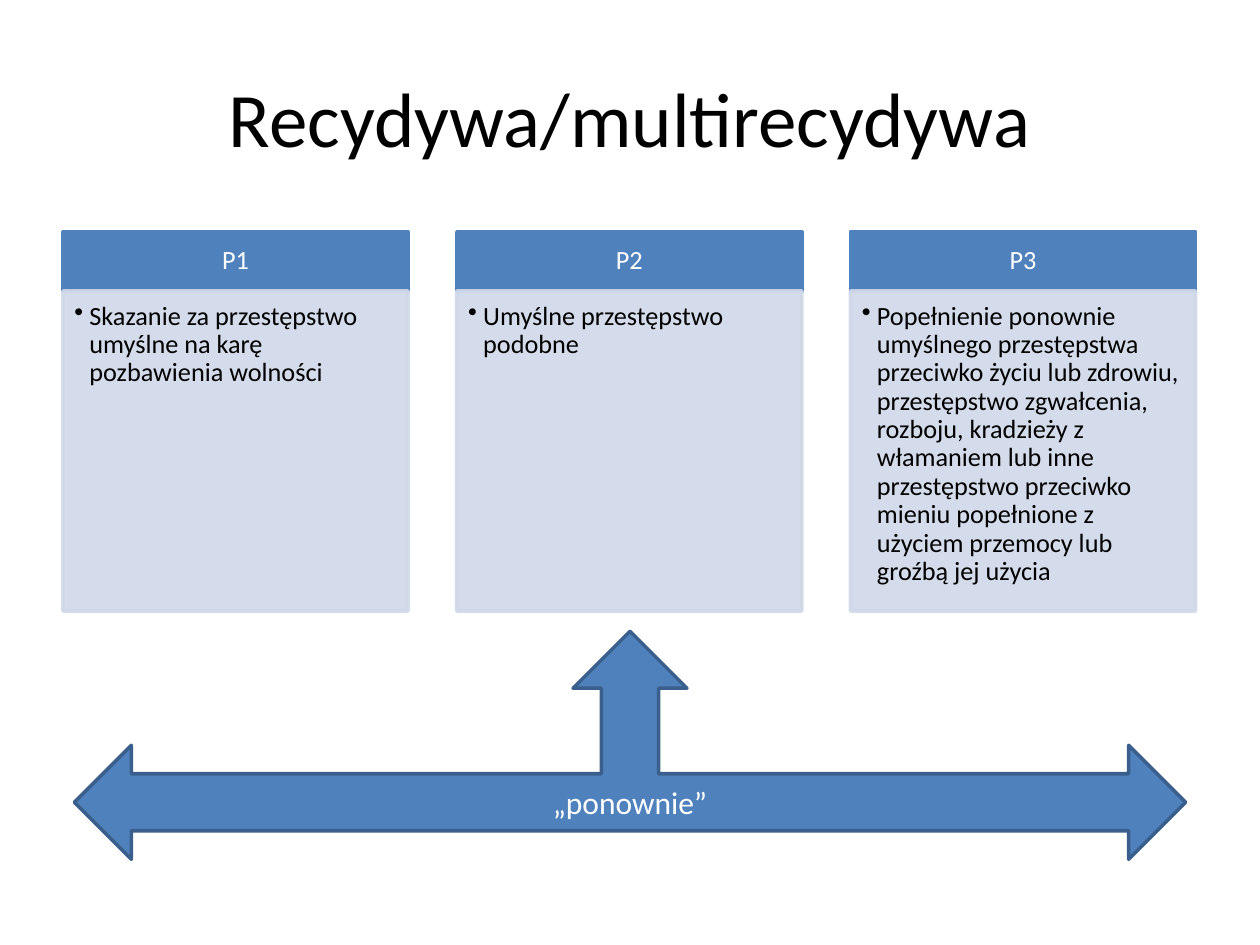
"""Build a slide comparing three offences leading to recidivism."""
from lxml import etree
from pptx import Presentation
from pptx.dml.color import RGBColor
from pptx.enum.shapes import MSO_SHAPE
from pptx.enum.text import MSO_ANCHOR, PP_ALIGN
from pptx.oxml.ns import qn
from pptx.util import Inches, Pt

RECT, ARROW = MSO_SHAPE.RECTANGLE, MSO_SHAPE.LEFT_RIGHT_UP_ARROW
TOP, MIDDLE = MSO_ANCHOR.TOP, MSO_ANCHOR.MIDDLE
LEFT, CENTER = PP_ALIGN.LEFT, PP_ALIGN.CENTER

FONT = "Calibri"
BLACK, WHITE = "000000", "FFFFFF"
BLUE, DARK_BLUE, PALE_BLUE = "4F81BD", "3A5F8C", "D0D8E8"
TITLE = "Recydywa/multirecydywa"
ARROW_TEXT = "„ponownie”"
COLUMNS = [
    ("P1", "Skazanie za przestępstwo umyślne na karę pozbawienia wolności"),
    ("P2", "Umyślne przestępstwo podobne"),
    ("P3", "Popełnienie ponownie umyślnego przestępstwa przeciwko życiu lub zdrowiu, "
           "przestępstwo zgwałcenia, rozboju, kradzieży z włamaniem lub inne przestępstwo "
           "przeciwko mieniu popełnione z użyciem przemocy lub groźbą jej użycia"),
]
COL_LEFT, COL_PITCH, COL_W = 0.5, 3.125, 2.74
HEAD_TOP, HEAD_H, BODY_H = 1.84, 0.47, 2.54
HEAD_INSETS = (0.12, 0.07, 0.12, 0.07)
BODY_INSETS = (0.09, 0.09, 0.12, 0.13)
PLAIN_INSETS = (0.1, 0.05, 0.1, 0.05)


def rgb(value):
    return RGBColor.from_string(value)


def set_text(sp, text, size, color, align=CENTER, anchor=MIDDLE, insets=PLAIN_INSETS):
    tf = sp.text_frame
    tf.word_wrap = True
    tf.vertical_anchor = anchor
    tf.margin_left, tf.margin_top, tf.margin_right, tf.margin_bottom = map(Inches, insets)
    tf.text = text
    p = tf.paragraphs[0]
    p.alignment = align
    font = p.runs[0].font
    font.name, font.size, font.color.rgb = FONT, Pt(size), rgb(color)
    return p


def add_box(s, kind, at, fill, line):
    sp = s.shapes.add_shape(kind, *map(Inches, at))
    sp.shadow.inherit = False
    sp.fill.solid()
    sp.fill.fore_color.rgb = rgb(fill)
    sp.line.color.rgb = rgb(line)
    sp.line.width = Pt(2)
    return sp


def set_opacity(sp, percent):
    for color in sp._element.spPr.iter(qn("a:srgbClr")):
        etree.SubElement(color, qn("a:alpha"), val=str(percent * 1000))


def add_bullet(p, indent):
    pPr = p._p.get_or_add_pPr()
    pPr.set("marL", str(Inches(indent)))
    pPr.set("indent", str(-Inches(indent)))
    etree.SubElement(pPr, qn("a:buChar"), char="•")


def add_column(s, x, head, body):
    sp = add_box(s, RECT, (x, HEAD_TOP, COL_W, HEAD_H), BLUE, BLUE)
    set_text(sp, head, 15, WHITE, insets=HEAD_INSETS).line_spacing = 0.9
    sp = add_box(s, RECT, (x, HEAD_TOP + HEAD_H, COL_W, BODY_H), PALE_BLUE, PALE_BLUE)
    set_opacity(sp, 90)
    p = set_text(sp, body, 15, BLACK, LEFT, TOP, BODY_INSETS)
    p.line_spacing = 0.9
    add_bullet(p, 0.12)


def main():
    prs = Presentation()
    prs.slide_width, prs.slide_height = Inches(10), Inches(7.5)
    s = prs.slides.add_slide(prs.slide_layouts[6])
    title = s.shapes.add_textbox(*map(Inches, (0.5, 0.3, 9, 1.25)))
    set_text(title, TITLE, 44, BLACK)
    for i, (head, body) in enumerate(COLUMNS):
        add_column(s, COL_LEFT + i * COL_PITCH, head, body)
    arrow = add_box(s, ARROW, (0.59, 5.01, 8.82, 1.81), BLUE, DARK_BLUE)
    set_text(arrow, ARROW_TEXT, 18, WHITE)
    prs.save("out.pptx")


if __name__ == "__main__":
    main()
